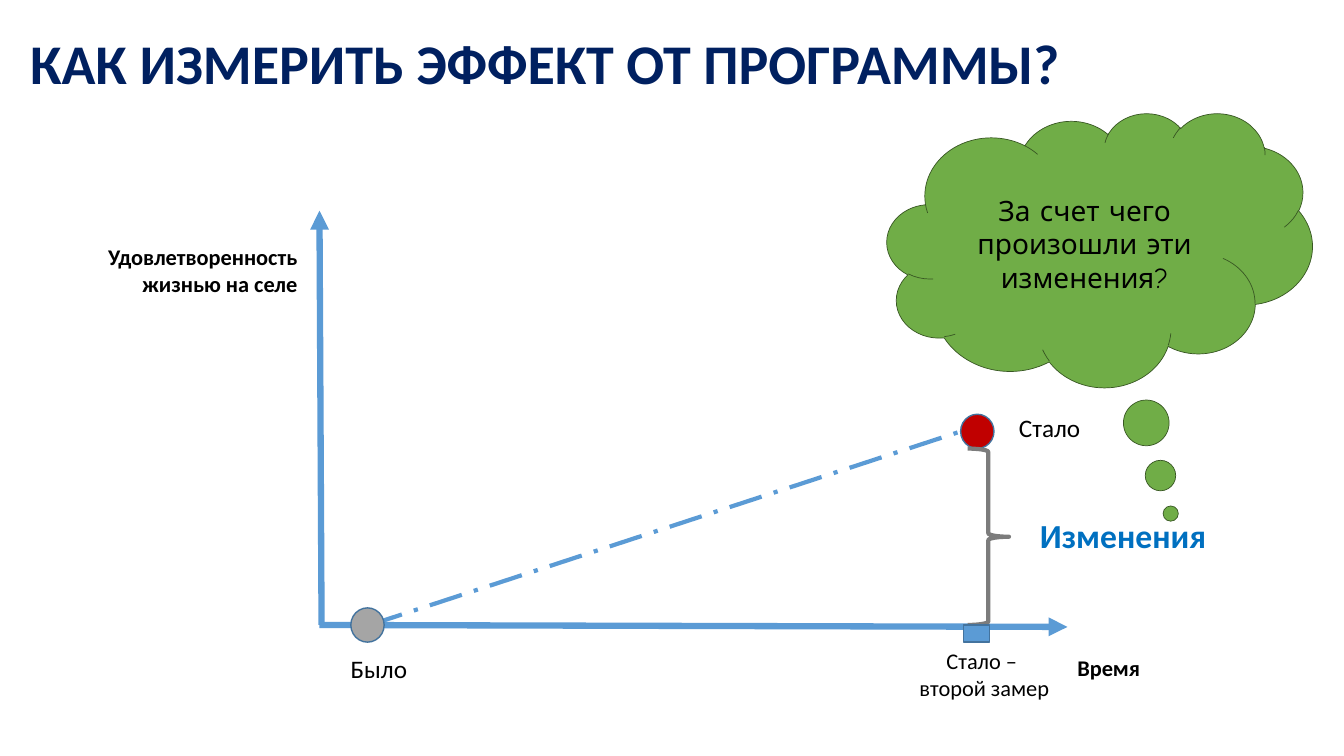
from pptx import Presentation
from pptx.dml.color import RGBColor
from pptx.enum.dml import MSO_LINE_DASH_STYLE as DASH
from pptx.enum.shapes import MSO_CONNECTOR, MSO_SHAPE as SHAPE
from pptx.enum.text import MSO_ANCHOR as ANCHOR, PP_ALIGN as ALIGN
from pptx.oxml.ns import qn
from pptx.util import Pt
from lxml.etree import SubElement

COLORS = {
    "navy": "002060", "black": "000000", "blue": "5B9BD5", "edge": "43739E",
    "accent": "0070C0", "gray": "A5A5A5", "red": "C00000", "brace": "7C7C7C",
    "green": "70AD47", "dark_green": "385723",
}


def rgb(name):
    return RGBColor.from_string(COLORS[name])


def set_text(tf, lines, size, color="black", bold=False, align=ALIGN.LEFT,
             anchor=ANCHOR.TOP, font="Calibri", spacing=None):
    tf.word_wrap = True
    tf.vertical_anchor = anchor
    for i, line in enumerate(lines):
        p = tf.add_paragraph() if i else tf.paragraphs[0]
        p.alignment = align
        p.line_spacing = spacing
        r = p.add_run()
        r.text = line
        r.font.color.rgb = rgb(color)
        for key, value in {"name": font, "size": Pt(size), "bold": bold}.items():
            setattr(r.font, key, value)


def add_label(s, box, lines, size, **fmt):
    sp = s.shapes.add_textbox(*map(Pt, box))
    set_text(sp.text_frame, lines, size, **fmt)


def add_figure(s, kind, box, fill, line="edge", width=1):
    sp = s.shapes.add_shape(kind, *map(Pt, box))
    sp.shadow.inherit = False
    if fill:
        sp.fill.solid()
        sp.fill.fore_color.rgb = rgb(fill)
    else:
        sp.fill.background()
    sp.line.color.rgb = rgb(line)
    sp.line.width = Pt(width)
    return sp


def add_line(s, start, end, width, dash=None, arrow=False):
    cn = s.shapes.add_connector(MSO_CONNECTOR.STRAIGHT, *map(Pt, start + end))
    cn.line.color.rgb = rgb("blue")
    cn.line.width = Pt(width)
    if dash:
        cn.line.dash_style = dash
    if arrow:
        SubElement(cn.line._get_or_add_ln(), qn("a:tailEnd"), type="triangle")
    SubElement(cn._element.spPr, qn("a:effectLst"))


def main():
    prs = Presentation()
    prs.slide_width, prs.slide_height = Pt(960), Pt(540)
    s = prs.slides.add_slide(prs.slide_layouts[6])

    # Trend, title and axes
    add_line(s, (264.2, 446.4), (686.2, 308.2), 3, dash=DASH.LONG_DASH_DOT)
    add_label(s, (14.4, 13.7, 898.6, 67.7), ["КАК ИЗМЕРИТЬ ЭФФЕКТ ОТ ПРОГРАММЫ?"], 40,
              color="navy", bold=True, anchor=ANCHOR.MIDDLE, spacing=0.9)
    add_line(s, (228.2, 446.4), (762.5, 447.8), 4.5, arrow=True)
    add_line(s, (229.7, 446.4), (228.2, 150.5), 4.5, arrow=True)
    add_label(s, (762.5, 463.7, 116.6, 26.6), ["Время"], 16, bold=True)
    add_label(s, (36.7, 169.9, 182.9, 46.1), ["Удовлетворенность жизнью на селе"], 16,
              bold=True, align=ALIGN.RIGHT)

    # Measurement points
    for left, top, fill in ((250.6, 434.2, "gray"), (686.2, 295.9, "red")):
        add_figure(s, SHAPE.OVAL, (left, top, 23.8, 24.5), fill)
    for left, top, name in ((243.4, 463, "Было"), (720.7, 290.9, "Стало")):
        add_label(s, (left, top, 69.8, 28.8), [name], 18)

    # Size of the change
    add_figure(s, SHAPE.RIGHT_BRACE, (691.2, 320.4, 29.5, 126), None, "brace", 3)
    add_label(s, (735.8, 364.3, 197.3, 36), ["Изменения"], 24, color="accent", bold=True)

    # Question in the cloud
    cloud = add_figure(s, SHAPE.CLOUD_CALLOUT, (633.6, 80.6, 303.8, 195.8),
                       "green", "dark_green", 0.5)
    cloud.adjustments[0], cloud.adjustments[1] = 0.167, 0.962
    set_text(cloud.text_frame, ["За счет чего произошли эти изменения?"], 20,
             align=ALIGN.CENTER, anchor=ANCHOR.MIDDLE, font="Comic Neue")

    # Second measurement on the time axis
    add_label(s, (637.2, 458.6, 131.8, 46.1), ["Стало – ", "второй замер"], 16,
              align=ALIGN.CENTER)
    add_figure(s, SHAPE.RECTANGLE, (688.3, 446.4, 18.7, 12.2), "blue")

    prs.save("out.pptx")


if __name__ == "__main__":
    main()
